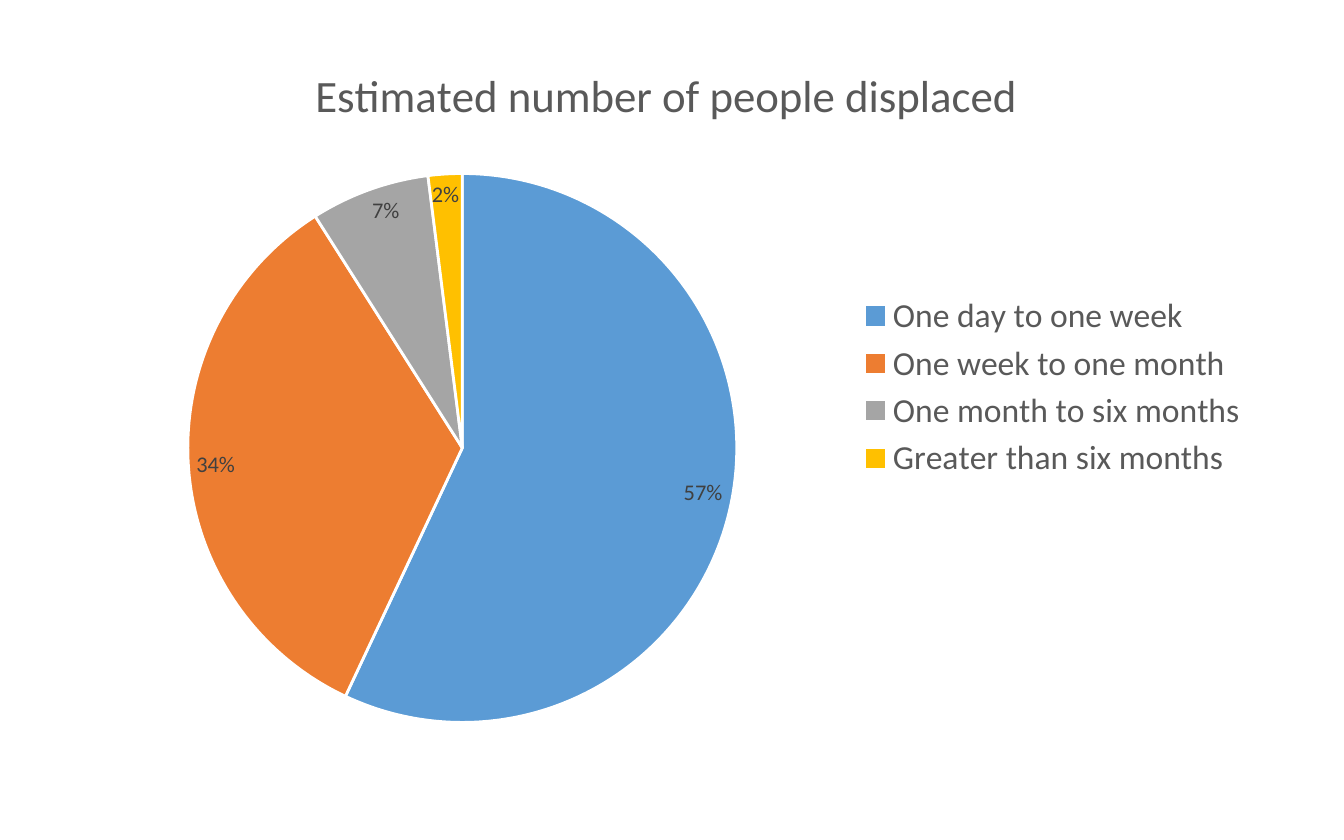
from lxml import etree
from pptx import Presentation
from pptx.chart.data import CategoryChartData
from pptx.dml.color import RGBColor
from pptx.enum.chart import XL_CHART_TYPE as ChartType
from pptx.enum.chart import XL_LABEL_POSITION as LabelPosition
from pptx.enum.chart import XL_LEGEND_POSITION as LegendPosition
from pptx.oxml import parse_xml
from pptx.oxml.ns import nsdecls, qn
from pptx.util import Inches, Pt

COLORS = {"title": "595959", "legend": "595959", "label": "404040",
          "base": "000000", "edge": "FFFFFF"}
DURATIONS = {
    "One day to one week": (57, "5B9BD5"),
    "One week to one month": (34, "ED7D31"),
    "One month to six months": (7, "A5A5A5"),
    "Greater than six months": (2, "FFC000"),
}


def write(frame, text, size, color, bold=False, name="Calibri"):
    """Put text in a frame with the given format."""
    paragraph = frame.paragraphs[0]
    run = paragraph.add_run()
    run.text = text
    for font in (paragraph.font, run.font):
        font.size, font.bold, font.name = Pt(size), bold, name
        font.color.rgb = RGBColor.from_string(color)


def place(part, **fractions):
    """Fix a chart part at fractions of the chart's width and height."""
    layout = part.find(qn("c:layout"))
    if layout is None:
        layout = parse_xml(f"<c:layout {nsdecls('c')}/>")
        part.insert(0, layout)
    manual = etree.SubElement(layout, qn("c:manualLayout"))
    if "w" in fractions:
        etree.SubElement(manual, qn("c:layoutTarget"), val="inner")
    for axis in ("x", "y"):
        etree.SubElement(manual, qn(f"c:{axis}Mode"), val="edge")
    for key, value in fractions.items():
        etree.SubElement(manual, qn(f"c:{key}"), val=str(value))


# Slide
prs = Presentation()
prs.slide_width, prs.slide_height = Inches(10), Inches(6.25)
slide = prs.slides.add_slide(prs.slide_layouts[6])

# Pie of displaced people by duration
data = CategoryChartData()
data.categories = list(DURATIONS)
data.add_series("Series 1", [share for share, _ in DURATIONS.values()])
displaced = slide.shapes.add_chart(
    ChartType.PIE, Inches(0.51), Inches(0.21), Inches(8.88), Inches(5.34), data
).chart
displaced.font.size, displaced.font.name = Pt(10), "Calibri"
displaced.font.color.rgb = RGBColor.from_string(COLORS["base"])

# Title
displaced.has_title = True
write(displaced.chart_title.text_frame, "Estimated number of people displaced",
      size=24, color=COLORS["title"])
displaced.chart_title.include_in_layout = False
place(displaced.element.find(".//" + qn("c:title")), x=0.2, y=0.04)

# Slices
pie = displaced.plots[0]
pie.vary_by_categories = True
place(displaced.element.find(".//" + qn("c:plotArea")),
      x=0.1, y=0.2, w=0.46, h=0.77)
for index, (_, color) in enumerate(DURATIONS.values()):
    slice_format = pie.series[0].points[index].format
    slice_format.fill.solid()
    slice_format.fill.fore_color.rgb = RGBColor.from_string(color)
    slice_format.line.color.rgb = RGBColor.from_string(COLORS["edge"])
    slice_format.line.width = Pt(1.5)

# Percent labels
percents = pie.series[0].data_labels
percents.show_percentage = True
percents.show_value = False
percents.number_format, percents.number_format_is_linked = "0%", False
percents.position = LabelPosition.INSIDE_END
percents.font.size, percents.font.name = Pt(12), "Calibri"
percents.font.color.rgb = RGBColor.from_string(COLORS["label"])

# Legend
displaced.has_legend = True
legend = displaced.legend
legend.position = LegendPosition.RIGHT
legend.include_in_layout = False
legend.font.size, legend.font.name = Pt(18), "Calibri"
legend.font.color.rgb = RGBColor.from_string(COLORS["legend"])

prs.save("out.pptx")
